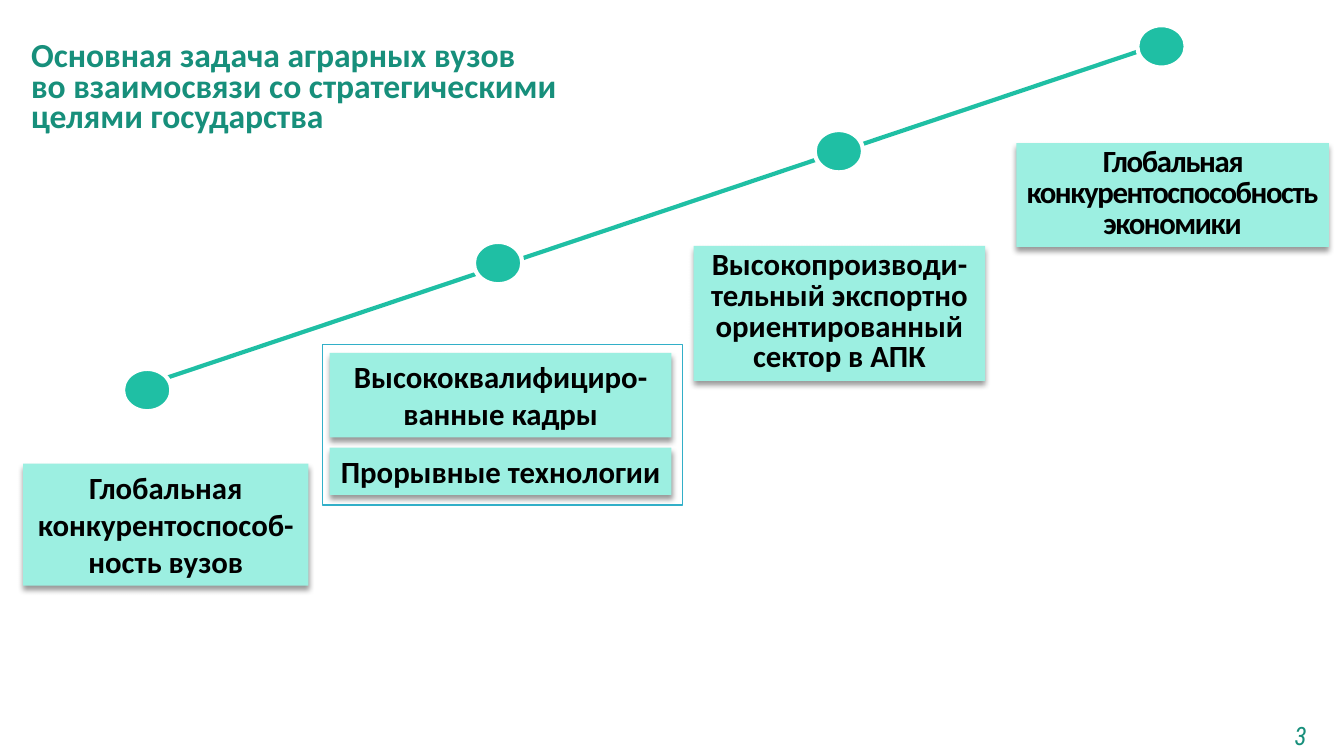
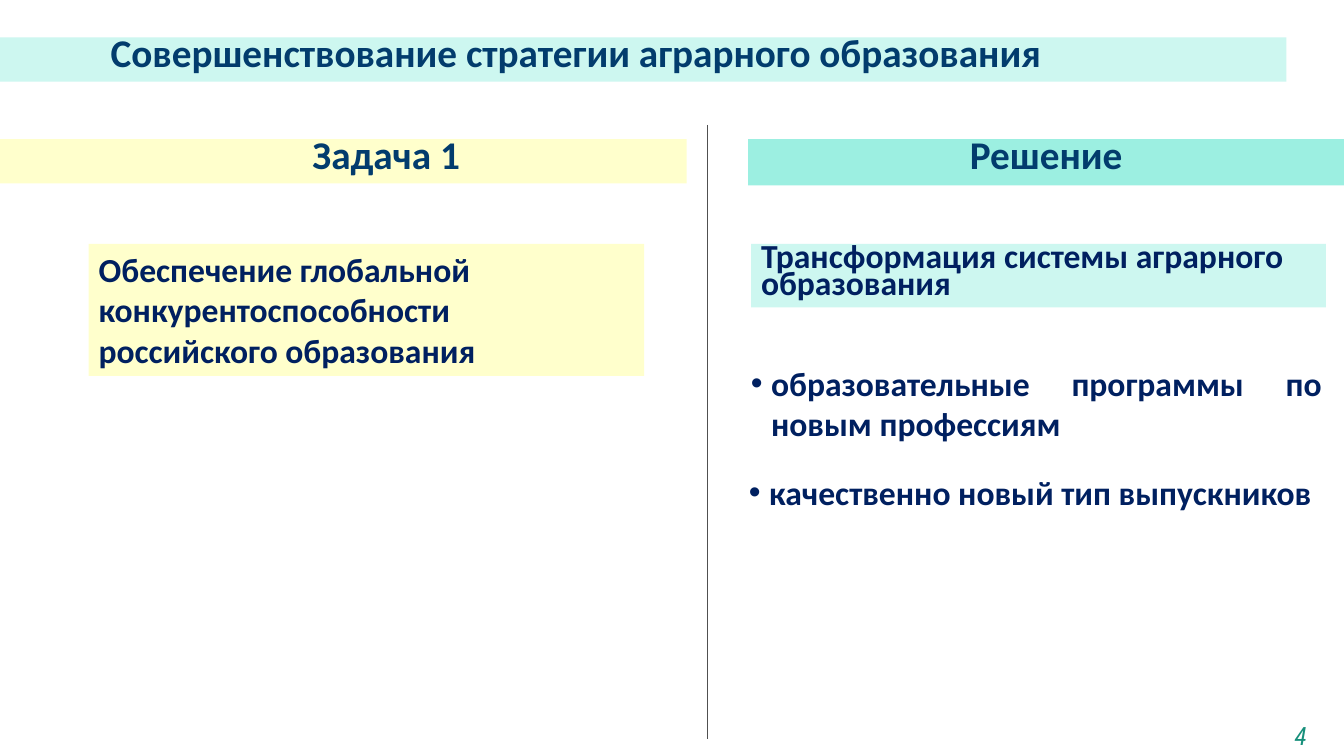
from lxml.etree import SubElement
from pptx import Presentation
from pptx.dml.color import RGBColor
from pptx.enum.shapes import MSO_CONNECTOR, MSO_SHAPE
from pptx.enum.text import MSO_ANCHOR, MSO_AUTO_SIZE, PP_ALIGN
from pptx.oxml.ns import qn
from pptx.util import Emu, Pt

PX = 9144
WHITE = RGBColor(0xFF, 0xFF, 0xFF)
BLACK = RGBColor(0x00, 0x00, 0x00)
GREEN = RGBColor(0x17, 0x8F, 0x7B)
TEAL = RGBColor(0x1F, 0xBF, 0xA4)
MINT = RGBColor(0x9C, 0xEF, 0xE1)
PALE_MINT = RGBColor(0xCD, 0xF7, 0xF0)
CREAM = RGBColor(0xFF, 0xFF, 0xCC)
FRAME_BLUE = RGBColor(0x32, 0xAF, 0xC8)
NAVY = RGBColor(0x00, 0x20, 0x60)
HEADING_BLUE = RGBColor(0x02, 0x3C, 0x6D)
GREY = RGBColor(0x50, 0x50, 0x50)
BODY_FONT = "Calibri"
NUMBER_FONT = "Roboto Condensed"


def px(value):
    return Emu(value * PX)


def add_box(s, box, fill=None, line=None, width=1, kind=MSO_SHAPE.RECTANGLE):
    sp = s.shapes.add_shape(kind, *map(px, box))
    sp.shadow.inherit = False
    if fill is None:
        sp.fill.background()
    else:
        sp.fill.solid()
        sp.fill.fore_color.rgb = fill
    if line is None:
        sp.line.fill.background()
    else:
        sp.line.color.rgb = line
        sp.line.width = Pt(width)
    return sp


def add_line(s, start, end, color, width):
    line = s.shapes.add_connector(MSO_CONNECTOR.STRAIGHT, *map(px, start + end))
    line.line.color.rgb = color
    line.line.width = Pt(width)
    SubElement(line._element.spPr, qn("a:effectLst"))


def write(sp, paragraphs, size, color, align=PP_ALIGN.LEFT, spacing=None,
          font=BODY_FONT, bold=True, italic=False, tracking=None):
    tf = sp.text_frame
    tf.word_wrap = True
    tf.auto_size = MSO_AUTO_SIZE.SHAPE_TO_FIT_TEXT
    tf.vertical_anchor = MSO_ANCHOR.TOP
    for i, text in enumerate(paragraphs):
        p = tf.add_paragraph() if i else tf.paragraphs[0]
        p.alignment = align
        if spacing:
            p.line_spacing = Pt(spacing)
        r = p.add_run()
        r.text = text
        r.font.name = font
        r.font.size = Pt(size)
        r.font.bold = bold
        r.font.italic = italic
        r.font.color.rgb = color
        if tracking:
            r._r.get_or_add_rPr().set("spc", str(tracking))


def indent(sp, left, bullet=False):
    pPr = sp.text_frame.paragraphs[0]._p.get_or_add_pPr()
    pPr.set("marL", str(px(left)))
    if bullet:
        pPr.set("indent", str(px(-left)))
        SubElement(pPr, qn("a:buFont"), typeface="Arial")
        SubElement(pPr, qn("a:buChar"), char="•")


def add_shadow(sp):
    effects = sp._element.spPr.find(qn("a:effectLst"))
    shadow = SubElement(effects, qn("a:outerShdw"), blurRad=str(Pt(4)),
                        dist=str(Pt(3)), dir="5400000", rotWithShape="0")
    color = SubElement(shadow, qn("a:srgbClr"), val=str(BLACK))
    SubElement(color, qn("a:alpha"), val="40000")


def add_page_number(s, number):
    sp = s.shapes.add_textbox(*map(px, (1247, 710, 86, 40)))
    write(sp, [number], 18, GREEN, PP_ALIGN.CENTER, font=NUMBER_FONT,
          bold=False, italic=True)


def add_goal(s, box, paragraphs, spacing=None, tracking=None):
    sp = add_box(s, box, MINT)
    add_shadow(sp)
    write(sp, paragraphs, 22, BLACK, PP_ALIGN.CENTER, spacing, tracking=tracking)


def add_band(s, box, text, fill, left=0, align=PP_ALIGN.LEFT):
    sp = add_box(s, box, fill)
    write(sp, [text], 28, HEADING_BLUE, align, 24)
    indent(sp, left)


def add_statement(s, box, text, fill, spacing=None):
    write(add_box(s, box, fill), [text], 24, NAVY, spacing=spacing)


def add_bullet(s, box, text):
    sp = add_box(s, box, WHITE)
    write(sp, [text], 24, NAVY, PP_ALIGN.JUSTIFY)
    indent(sp, 20, bullet=True)


def add_rising_path(s):
    add_line(s, (141, 383), (1144, 46), TEAL, 3)
    for x, y in ((122, 366), (470, 240), (808, 129), (1128, 25)):
        add_box(s, (x, y, 48, 42), TEAL, WHITE, 3, MSO_SHAPE.OVAL)


def add_resources(s, x, y):
    add_goal(s, (x + 7, y + 8, 339, 84), ["Высококвалифициро-ванные кадры"])
    add_goal(s, (x + 7, y + 102, 339, 47), ["Прорывные технологии"])
    add_box(s, (x, y, 357, 159), line=FRAME_BLUE)


def build_goals_slide(s):
    title = add_box(s, (21, 38, 566, 104), WHITE)
    write(title, ["Основная задача аграрных вузов",
                  "во взаимосвязи со стратегическими целями государства"],
          24, GREEN, spacing=22)
    add_goal(s, (23, 460, 283, 121), ["Глобальная конкурентоспособ-ность вузов"])
    add_goal(s, (688, 244, 289, 134),
             ["Высокопроизводи-тельный экспортно ориентированный сектор в АПК"], 22)
    add_goal(s, (1008, 142, 310, 103),
             ["Глобальная конкурентоспособность", "экономики"], 22, -100)
    add_rising_path(s)
    add_resources(s, 320, 342)
    add_page_number(s, "3")


def add_task_column(s, x, y):
    add_band(s, (x, y, 681, 44), "Задача 1", CREAM, 300)
    add_statement(s, (x + 88, y + 104, 551, 131),
                  "Обеспечение глобальной конкурентоспособности российского образования",
                  CREAM)


def add_solution_column(s, x, y):
    add_band(s, (x, y, 591, 46), "Решение", MINT, align=PP_ALIGN.CENTER)
    add_statement(s, (x + 3, y + 104, 570, 63),
                  "Трансформация системы аграрного образования", PALE_MINT, 19)
    add_bullet(s, (x - 7, y + 217, 586, 91),
               "образовательные программы по новым профессиям")
    add_bullet(s, (x - 9, y + 325, 581, 50), "качественно новый тип выпускников")


def build_strategy_slide(s):
    add_band(s, (0, 37, 1276, 44),
             "Совершенствование стратегии аграрного образования", PALE_MINT, 100)
    add_line(s, (702, 124), (702, 733), GREY, 0.5)
    add_task_column(s, 0, 138)
    add_solution_column(s, 742, 138)
    add_page_number(s, "4")


def main():
    prs = Presentation()
    prs.slide_width, prs.slide_height = px(1333), px(750)
    for build in (build_goals_slide, build_strategy_slide):
        build(prs.slides.add_slide(prs.slide_layouts[6]))
    prs.save("out.pptx")


if __name__ == "__main__":
    main()
